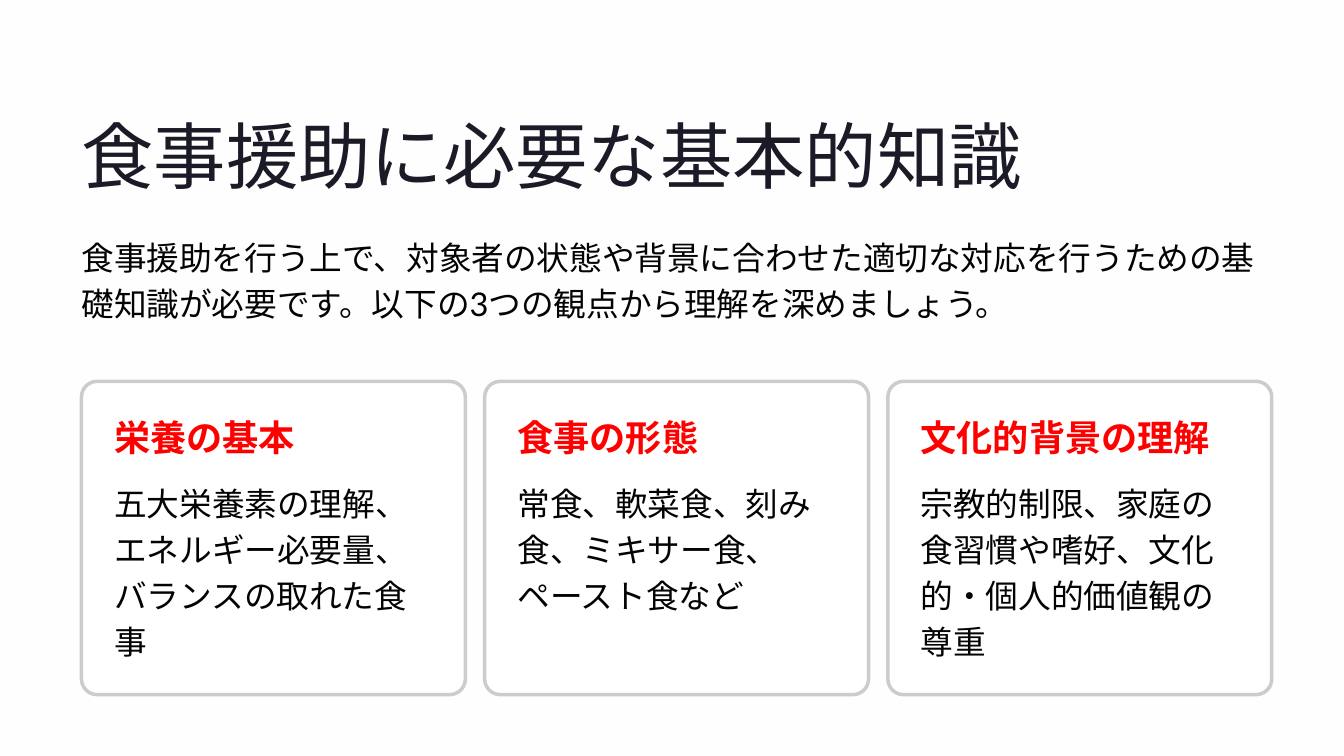
import dataclasses

import lxml.etree
import pptx
import pptx.dml.color
import pptx.enum.lang
import pptx.enum.shapes
import pptx.enum.text
import pptx.oxml.ns
import pptx.util

Inches = pptx.util.Inches
Pt = pptx.util.Pt


@dataclasses.dataclass(frozen=True)
class Style:
    """Font, size, line pitch, colour and weight of one kind of text."""
    font: str
    size: float
    pitch: float
    color: str
    bold: bool = False


class Theme:
    back = "FEFEFE"
    card = "FFFFFF"
    edge = "CCCCCC"
    title = Style("Inter", 62, 77.5, "1B1B27")
    head = Style("Inter", 31, 38.5, "FF0000", True)
    body = Style("Lato", 28, 39.5, "030303")


def rgb(code):
    return pptx.dml.color.RGBColor.from_string(code)


class Deck:
    def __init__(self, theme):
        self.theme = theme
        self.file = pptx.Presentation()
        self.file.slide_width = Inches(16)
        self.file.slide_height = Inches(9)
        self.slide = self.file.slides.add_slide(self.file.slide_layouts[5])
        fill = self.slide.background.fill
        fill.solid()
        fill.fore_color.rgb = rgb(theme.back)

    def label(self, shape, text, style):
        frame = shape.text_frame
        frame.word_wrap = True
        frame.auto_size = pptx.enum.text.MSO_AUTO_SIZE.NONE
        frame.vertical_anchor = pptx.enum.text.MSO_ANCHOR.TOP
        frame.margin_left = frame.margin_right = 0
        frame.margin_top = frame.margin_bottom = 0
        para = frame.paragraphs[0]
        para.alignment = pptx.enum.text.PP_ALIGN.LEFT
        para.line_spacing = Pt(style.pitch)
        run = para.add_run()
        run.text = text
        font = run.font
        font.name = style.font
        font.size = Pt(style.size)
        font.bold = style.bold
        font.color.rgb = rgb(style.color)
        font.language_id = pptx.enum.lang.MSO_LANGUAGE_ID.JAPANESE
        props = run._r.get_or_add_rPr()
        east = lxml.etree.SubElement(props, pptx.oxml.ns.qn("a:ea"))
        east.set("typeface", style.font)

    def title(self, text, left, top, width, height):
        shape = self.slide.shapes.title
        shape.left, shape.top = Inches(left), Inches(top)
        shape.width, shape.height = Inches(width), Inches(height)
        self.label(shape, text, self.theme.title)

    def text(self, text, style, left, top, width, height):
        box = self.slide.shapes.add_textbox(
            Inches(left), Inches(top), Inches(width), Inches(height))
        self.label(box, text, style)

    def card(self, head, body, left, top, width, height):
        shape = self.slide.shapes.add_shape(
            pptx.enum.shapes.MSO_SHAPE.ROUNDED_RECTANGLE,
            Inches(left), Inches(top), Inches(width), Inches(height))
        shape.adjustments[0] = 0.05
        shape.shadow.inherit = False
        shape.fill.solid()
        shape.fill.fore_color.rgb = rgb(self.theme.card)
        shape.line.color.rgb = rgb(self.theme.edge)
        shape.line.width = Pt(3)
        inner = left + 0.39
        self.text(head, self.theme.head, inner, top + 0.39, 3.69, 0.54)
        self.text(body, self.theme.body, inner, top + 1.14, 3.69, 1.66)


CARDS = [
    ("栄養の基本", "五大栄養素の理解、エネルギー必要量、バランスの取れた食事"),
    ("食事の形態", "常食、軟菜食、刻み食、ミキサー食、ペースト食など"),
    ("文化的背景の理解",
     "宗教的制限、家庭の食習慣や嗜好、文化的・個人的価値観の尊重"),
]


def main():
    left, width = 0.97, 14.07
    deck = Deck(Theme())
    deck.title("食事援助に必要な基本的知識", left, 1.28, width, 1.08)
    deck.text(
        "食事援助を行う上で、対象者の状態や背景に合わせた適切な対応を行うための"
        "基礎知識が必要です。以下の3つの観点から理解を深めましょう。",
        deck.theme.body, left, 2.75, width, 1.1)
    for i, (head, body) in enumerate(CARDS):
        deck.card(head, body, left + 4.8 * i, 4.54, 4.57, 3.73)
    deck.file.save("out.pptx")


if __name__ == "__main__":
    main()
